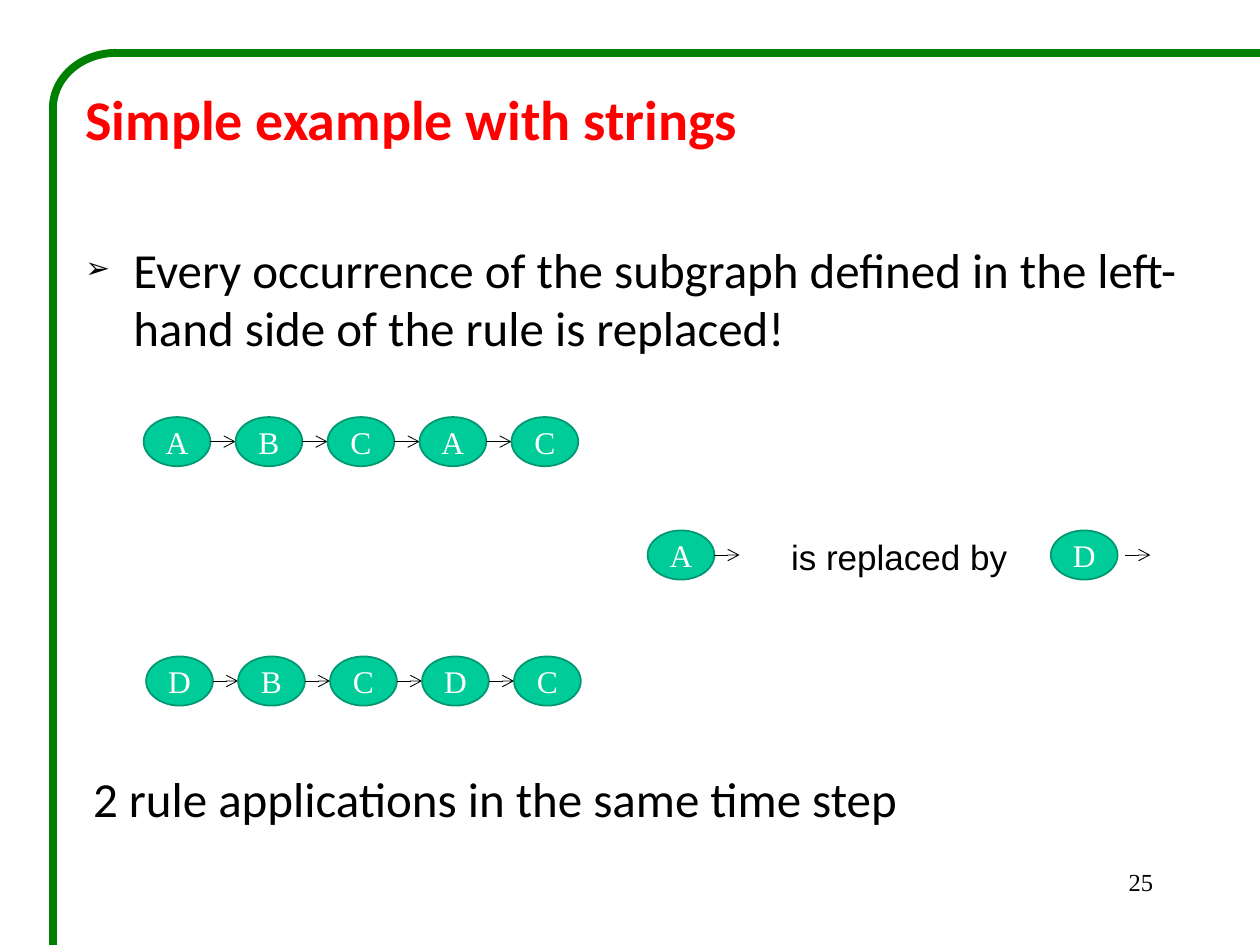
from dataclasses import dataclass

import lxml.etree
import pptx
import pptx.dml.color
import pptx.enum.shapes
import pptx.enum.text
import pptx.oxml.ns
import pptx.util

COLUMNS, ROWS = 100, 75
PAGE_WIDTH, PAGE_HEIGHT = pptx.util.Inches(10), pptx.util.Inches(7.5)
NODE_WIDTH, NODE_HEIGHT, NODE_STEP, ARROW_LENGTH = 5.3, 3.9, 7.3, 2
FRAME_LEFT, FRAME_TOP, CORNER_RIGHT, CORNER_BOTTOM = 4.2, 4.2, 9.2, 8.6
FRAME_COLOUR, FRAME_WEIGHT = "008000", 4.5
ALIGN = pptx.enum.text.PP_ALIGN


@dataclass(frozen=True)
class Chain:
    letters: str
    column: float
    row: float
    trailing_arrow: bool = False
    arrow_gap: float = 0


@dataclass(frozen=True)
class Style:
    font: str
    size: float
    colour: str = "000000"
    bold: bool = False


CHAINS = (
    Chain("ABCAC", 11.4, 33.1),
    Chain("A", 51.4, 42.1, trailing_arrow=True),
    Chain("D", 83.4, 42.1, trailing_arrow=True, arrow_gap=0.6),
    Chain("DBCDC", 11.6, 52.1),
)
NODE_STYLE = Style("Times New Roman", 18, "FFFFFF")
TITLE_STYLE = Style("Calibri", 32, "FF0000", True)
BODY_STYLE = Style("Calibri", 28)
RULE_STYLE = Style("Arial", 20)
NUMBER_STYLE = Style("Times New Roman", 14)


def across(columns: float) -> int:
    return round(PAGE_WIDTH * columns / COLUMNS)


def down(rows: float) -> int:
    return round(PAGE_HEIGHT * rows / ROWS)


def area(column: float, row: float, width: float, height: float) -> tuple:
    return across(column), down(row), across(width), down(height)


def rgb(colour: str) -> pptx.dml.color.RGBColor:
    return pptx.dml.color.RGBColor.from_string(colour)


def add_child(parent, tag: str, **attributes: str):
    return lxml.etree.SubElement(parent, pptx.oxml.ns.qn(tag), **attributes)


def set_line(line, colour: str, weight: float) -> None:
    line.color.rgb = rgb(colour)
    line.width = pptx.util.Pt(weight)


def write(para, text: str, style: Style, align=ALIGN.LEFT) -> None:
    para.text = text
    para.alignment = align
    for span in para.runs:
        span.font.name = style.font
        span.font.size = pptx.util.Pt(style.size)
        span.font.bold = style.bold
        span.font.color.rgb = rgb(style.colour)


def add_text(page, place: tuple, text: str, style: Style, align=ALIGN.LEFT, wrap: bool = True):
    frame = page.shapes.add_textbox(*area(*place)).text_frame
    frame.word_wrap = wrap
    write(frame.paragraphs[0], text, style, align)
    return frame


def add_bullet(frame, text: str, style: Style, space_before: float) -> None:
    para = frame.add_paragraph()
    write(para, text, style)
    para.space_before = pptx.util.Pt(space_before)
    properties = para._p.get_or_add_pPr()
    indent = across(3.8)
    properties.set("marL", str(indent))
    properties.set("indent", str(-indent))
    add_child(properties, "a:buSzPct", val="60000")
    add_child(properties, "a:buFont", typeface="Arial")
    add_child(properties, "a:buChar", char="➢")


def add_line(page, start: tuple, end: tuple, colour: str, weight: float, arrow: bool = False) -> None:
    connector = page.shapes.add_connector(
        pptx.enum.shapes.MSO_CONNECTOR.STRAIGHT,
        across(start[0]), down(start[1]), across(end[0]), down(end[1]),
    )
    set_line(connector.line, colour, weight)
    if arrow:
        add_child(connector.line._get_or_add_ln(), "a:tailEnd", type="arrow")
    add_child(connector._element.spPr, "a:effectLst")


def add_node(page, letter: str, column: float, row: float) -> None:
    node = page.shapes.add_shape(
        pptx.enum.shapes.MSO_SHAPE.OVAL, *area(column, row, NODE_WIDTH, NODE_HEIGHT)
    )
    node.shadow.inherit = False
    node.fill.solid()
    node.fill.fore_color.rgb = rgb("00CC99")
    set_line(node.line, "009771", 1)
    frame = node.text_frame
    frame.margin_left = frame.margin_right = 0
    frame.vertical_anchor = pptx.enum.text.MSO_ANCHOR.MIDDLE
    write(frame.paragraphs[0], letter, NODE_STYLE, ALIGN.CENTER)


def add_chain(page, chain: Chain) -> None:
    middle = chain.row + NODE_HEIGHT / 2
    for index, letter in enumerate(chain.letters):
        column = chain.column + index * NODE_STEP
        add_node(page, letter, column, chain.row)
        if index < len(chain.letters) - 1 or chain.trailing_arrow:
            start = column + NODE_WIDTH + chain.arrow_gap
            add_line(page, (start, middle), (start + ARROW_LENGTH, middle), "000000", 0.5, arrow=True)


def add_frame(page) -> None:
    add_line(page, (COLUMNS, FRAME_TOP), (CORNER_RIGHT, FRAME_TOP), FRAME_COLOUR, FRAME_WEIGHT)
    add_line(page, (FRAME_LEFT, CORNER_BOTTOM), (FRAME_LEFT, ROWS), FRAME_COLOUR, FRAME_WEIGHT)
    corner = page.shapes.add_shape(
        pptx.enum.shapes.MSO_SHAPE.ARC,
        *area(FRAME_LEFT, FRAME_TOP, 2 * (CORNER_RIGHT - FRAME_LEFT), 2 * (CORNER_BOTTOM - FRAME_TOP)),
    )
    corner.adjustments[0] = 108
    corner.adjustments[1] = 162
    corner.shadow.inherit = False
    corner.fill.background()
    set_line(corner.line, FRAME_COLOUR, FRAME_WEIGHT)


def main() -> None:
    deck = pptx.Presentation()
    deck.slide_width, deck.slide_height = PAGE_WIDTH, PAGE_HEIGHT
    page = deck.slides.add_slide(deck.slide_layouts[6])
    add_frame(page)
    heading = add_text(page, (5.8, 6.2, 90, 22.3), "Simple example with strings", TITLE_STYLE)
    add_bullet(
        heading,
        "Every occurrence of the subgraph defined in the left-hand side of the rule is replaced!",
        BODY_STYLE,
        space_before=50,
    )
    for chain in CHAINS:
        add_chain(page, chain)
    add_text(page, (61.8, 42, 19.3, 4.4), "is replaced by", RULE_STYLE, wrap=False)
    add_text(page, (6.4, 60.5, 72.7, 7.4), "2 rule applications in the same time step", BODY_STYLE)
    add_text(page, (71.7, 68.3, 20.8, 5), "25", NUMBER_STYLE, ALIGN.RIGHT)
    deck.save("out.pptx")


if __name__ == "__main__":
    main()
